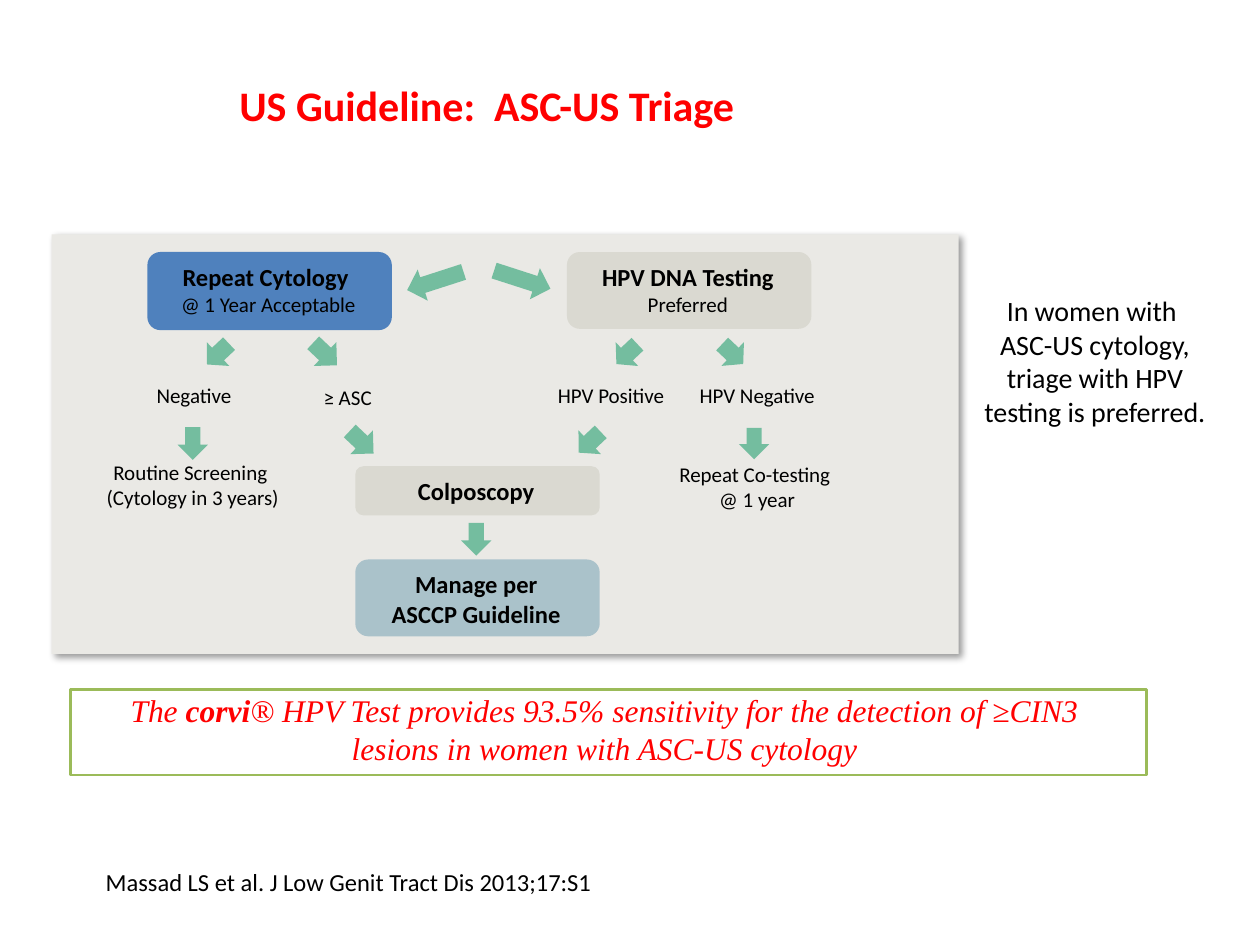
from typing import NamedTuple

from lxml import etree
from pptx import Presentation
from pptx import util as u
from pptx.dml import color
from pptx.enum import shapes, text
from pptx.oxml import ns

COLUMNS, ROWS = 100, 75
BLACK, RED, GREEN = "000000", "FF0000", "00925B"
DOWN, DOWN_RIGHT, DOWN_LEFT = 90, 43.4, 136.6


class Box(NamedTuple):
    """A rectangle in grid columns and rows."""
    left: float
    top: float
    width: float
    height: float

    def inner(self, left, top, width, height):
        """Return a box placed relative to this one."""
        return Box(self.left + left, self.top + top, width, height)

    def lengths(self):
        """Return the four lengths, one grid unit being a tenth of an inch."""
        return [u.Inches(value / 10) for value in self]


def rgb(value):
    """Turn a hex string into a colour."""
    return color.RGBColor.from_string(value)


def set_alpha(shape, percent):
    """Make the solid fill of a shape partly transparent."""
    fill_color = shape._element.spPr.find(ns.qn("a:solidFill"))[0]
    etree.SubElement(fill_color, ns.qn("a:alpha")).set("val", str(percent * 1000))


def add_shadow(shape):
    """Give a shape a soft shadow to the lower right."""
    effects = shape._element.spPr.find(ns.qn("a:effectLst"))
    shadow = etree.SubElement(effects, ns.qn("a:outerShdw"), blurRad=str(u.Pt(4)),
                              dist=str(u.Pt(3)), dir="2700000", algn="tl", rotWithShape="0")
    shadow_color = etree.SubElement(shadow, ns.qn("a:srgbClr"), val=BLACK)
    etree.SubElement(shadow_color, ns.qn("a:alpha"), val="40000")


def add_block(slide, kind, box, fill=None, alpha=100):
    """Add a preset shape without outline or shadow."""
    shape = slide.shapes.add_shape(kind, *box.lengths())
    shape.shadow.inherit = False
    shape.line.fill.background()
    if fill:
        shape.fill.solid()
        shape.fill.fore_color.rgb = rgb(fill)
    else:
        shape.fill.background()
    if alpha < 100:
        set_alpha(shape, alpha)
    return shape


def style_runs(paragraph, size, bold=False, italic=False, name="Calibri", fill=BLACK):
    """Format every run of a paragraph."""
    for run in paragraph.runs:
        font = run.font
        font.name, font.size, font.bold, font.italic = name, u.Pt(size), bold, italic
        font.color.rgb = rgb(fill)


def add_text(slide, box, lines, size, bold=False, fill=BLACK, centred=True, wrap=True):
    """Add a text box with one paragraph for each line."""
    shape = slide.shapes.add_textbox(*box.lengths())
    frame = shape.text_frame
    frame.text = "\n".join(lines)
    frame.word_wrap = wrap
    frame.auto_size = text.MSO_AUTO_SIZE.SHAPE_TO_FIT_TEXT
    for paragraph in frame.paragraphs:
        paragraph.alignment = text.PP_ALIGN.CENTER if centred else text.PP_ALIGN.LEFT
        style_runs(paragraph, size, bold, fill=fill)
    return shape


def add_node(slide, box, lines, fill, alpha=100):
    """Add a rounded box with a bold heading and an optional detail line."""
    add_block(slide, shapes.MSO_SHAPE.ROUNDED_RECTANGLE, box, fill, alpha)
    label = add_text(slide, box.inner(0.95, 0.3, 17.3, box.height - 0.6), lines, 14, True)
    for paragraph in label.text_frame.paragraphs[1:]:
        style_runs(paragraph, 12)


def add_arrow(slide, box, angle):
    """Add a translucent block arrow turned by an angle."""
    arrow = add_block(slide, shapes.MSO_SHAPE.RIGHT_ARROW, box, GREEN, 50)
    arrow.rotation = angle
    if angle in (DOWN_RIGHT, DOWN_LEFT):
        arrow.adjustments[0] = 0.53


def add_flowchart(slide, box):
    """Draw the triage flowchart on its shaded panel."""
    add_shadow(add_block(slide, shapes.MSO_SHAPE.RECTANGLE, box, "EAE9E5"))

    nodes = [
        (7.6, 1.4, 6.2, ["Repeat Cytology ", "@ 1 Year Acceptable"], "4F81BD", 100),
        (40.9, 1.4, 6.1, ["HPV DNA Testing", "Preferred"], "DAD9D1", 100),
        (24.1, 18.4, 3.9, ["Colposcopy"], "DAD9D1", 100),
        (24.1, 25.8, 6.1, ["Manage per ASCCP Guideline"], "6B9CB1", 50),
    ]
    for left, top, height, lines, fill, alpha in nodes:
        add_node(slide, box.inner(left, top, 19.4, height), lines, fill, alpha)

    labels = [
        (7, 11.3, 8.6, 3, ["Negative"], False),
        (17.7, 11.4, 11.6, 3, ["≥ ASC"], True),
        (38.2, 11.3, 12.4, 3, ["HPV Positive"], True),
        (49.7, 11.3, 12.6, 3, ["HPV Negative"], False),
        (2.5, 17.4, 17.4, 5, ["Routine Screening ", "(Cytology in 3 years)"], False),
        (48, 17.5, 16, 5.1, ["Repeat Co-testing ", "@ 1 year"], False),
    ]
    for left, top, width, height, lines, wrap in labels:
        add_text(slide, box.inner(left, top, width, height), lines, 12, wrap=wrap)

    arrows = [
        (28.1, 2.4, 4.7, 2.6, 162.1), (35, 2.3, 4.7, 2.6, 17.9),
        (12, 8.2, 2.4, 2.6, DOWN_LEFT), (20.4, 8.2, 2.6, 2.6, DOWN_RIGHT),
        (44.5, 8.2, 2.3, 2.6, DOWN_LEFT), (52.9, 8.2, 2.3, 2.6, DOWN_RIGHT),
        (23.3, 15.2, 2.6, 2.6, DOWN_RIGHT), (41.5, 15.2, 2.4, 2.6, DOWN_LEFT),
        (9.9, 15.4, 2.6, 2.4, DOWN), (54.5, 15.4, 2.5, 2.4, DOWN),
        (32.4, 23, 2.6, 2.4, DOWN),
    ]
    for *place, angle in arrows:
        add_arrow(slide, box.inner(*place), angle)


def add_callout(slide, box):
    """Add the outlined statement on test sensitivity."""
    shape = add_block(slide, shapes.MSO_SHAPE.RECTANGLE, box)
    shape.line.color.rgb = rgb("9BBB59")
    shape.line.width = u.Pt(1.5)
    frame = shape.text_frame
    frame.word_wrap = True
    frame.vertical_anchor = text.MSO_ANCHOR.MIDDLE
    frame.margin_top, frame.margin_bottom = u.Inches(0.1), u.Inches(0.15)
    frame.text = "The \nlesions in women with ASC-US cytology "
    first = frame.paragraphs[0]
    for words in ("corvi", "® HPV Test provides 93.5% sensitivity for the detection of ≥CIN3 "):
        first.add_run().text = words
    for paragraph in frame.paragraphs:
        paragraph.alignment = text.PP_ALIGN.CENTER
        style_runs(paragraph, 18, italic=True, name="Times New Roman", fill=RED)
    first.runs[1].font.bold = True


def add_title(slide, box):
    """Add the slide heading."""
    frame = add_text(slide, box, ["US Guideline:  ASC-US Triage"], 24, True, RED,
                     centred=False).text_frame
    frame.margin_left = frame.margin_bottom = 0


def main():
    """Build the slide and save it."""
    presentation = Presentation()
    presentation.slide_width = u.Inches(COLUMNS / 10)
    presentation.slide_height = u.Inches(ROWS / 10)
    slide = presentation.slides.add_slide(presentation.slide_layouts[6])
    add_title(slide, Box(19, 5.8, 53, 4.5))
    add_flowchart(slide, Box(4.1, 18.6, 72, 33.3))
    add_text(slide, Box(76.8, 22.8, 20.2, 11.8),
             ["In women with ", "ASC-US cytology, triage with HPV testing is preferred."], 16)
    add_callout(slide, Box(5.6, 54.7, 85.4, 6.8))
    add_text(slide, Box(7.4, 68.3, 58.9, 3.4),
             ["Massad LS et al. J Low Genit Tract Dis 2013;17:S1"], 14, centred=False)
    presentation.save("out.pptx")


if __name__ == "__main__":
    main()
